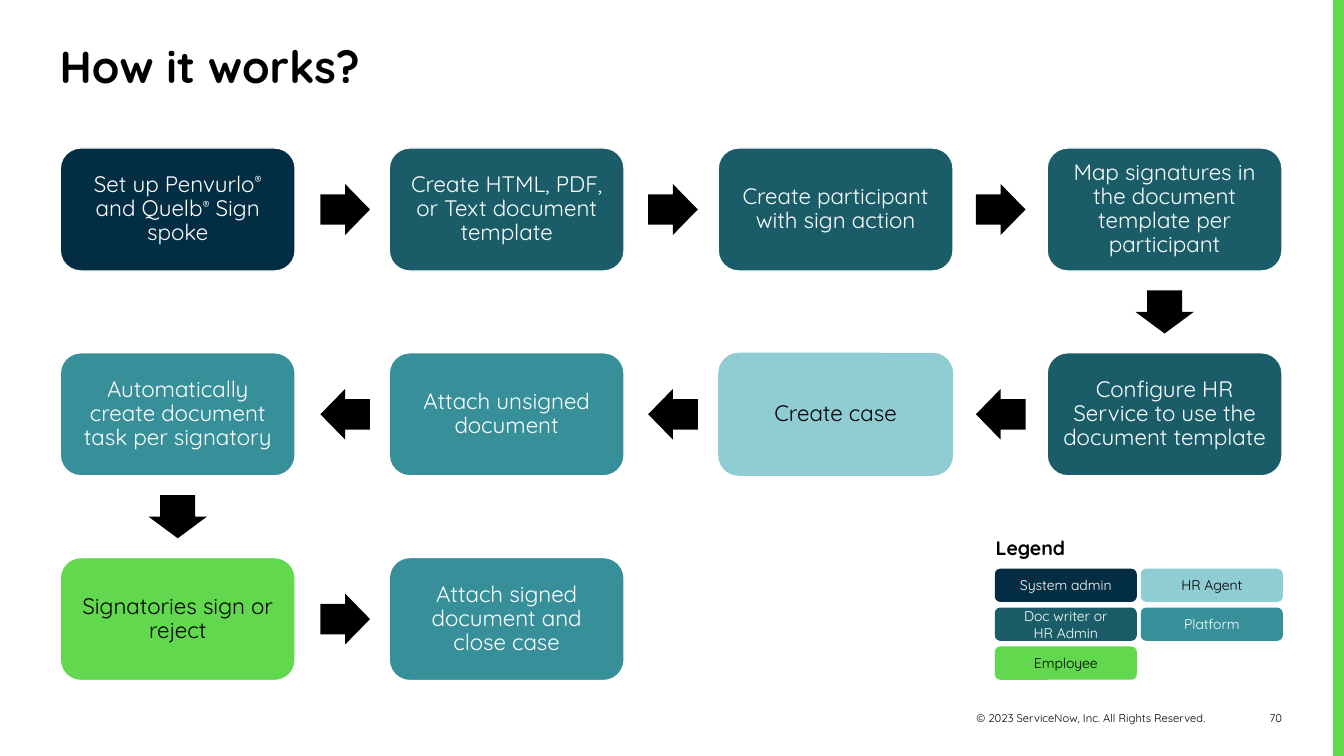
from pptx import Presentation
from pptx.dml.color import RGBColor
from pptx.enum import shapes, text
from pptx.util import Cm, Pt

BLACK = RGBColor(0x00, 0x00, 0x00)
WHITE = RGBColor(0xFF, 0xFF, 0xFF)
NAVY = RGBColor(0x03, 0x2D, 0x42)
DEEP_TEAL = RGBColor(0x1A, 0x5D, 0x68)
TEAL = RGBColor(0x37, 0x90, 0x99)
PALE_TEAL = RGBColor(0x90, 0xCC, 0xD3)
GREEN = RGBColor(0x62, 0xD8, 0x4E)
FONT = "Quicksand"

# Content: role -> (fill, font colour, outline)
ROLES = {
    "admin": (NAVY, WHITE, WHITE),
    "writer": (DEEP_TEAL, WHITE, WHITE),
    "agent": (PALE_TEAL, BLACK, None),
    "system": (TEAL, WHITE, WHITE),
    "employee": (GREEN, BLACK, WHITE),
}
TITLE = "How it works?"
# Steps in order: column, row, role, label
STEPS = [
    (0, 0, "admin", "Set up Penvurlo® and Quelb® Sign spoke"),
    (1, 0, "writer", "Create HTML, PDF, or Text document template"),
    (2, 0, "writer", "Create participant with sign action"),
    (3, 0, "writer", "Map signatures in the document template per participant"),
    (3, 1, "writer", "Configure HR Service to use the document template"),
    (2, 1, "agent", "Create case"),
    (1, 1, "system", "Attach unsigned document"),
    (0, 1, "system", "Automatically create document task per signatory"),
    (0, 2, "employee", "Signatories sign or reject"),
    (1, 2, "system", "Attach signed document and close case"),
]
LEGEND = [
    (0, 0, "admin", "System admin"),
    (0, 1, "writer", "Doc writer or\vHR Admin"),
    (1, 0, "agent", "HR Agent"),
    (1, 1, "system", "Platform"),
    (0, 2, "employee", "Employee"),
]
# Captions: left, top, width, height, size, bold, alignment, wording
CAPTIONS = [
    (24.84, 13.39, 2.34, 0.86, 14, True, text.PP_ALIGN.LEFT, "Legend"),
    (22.05, 17.81, 8.59, 0.58, 8, False, text.PP_ALIGN.RIGHT,
     "© 2023 ServiceNow, Inc. All Rights Reserved."),
    (30.71, 17.81, 1.85, 0.64, 8, False, text.PP_ALIGN.RIGHT, "70"),
]

# Layout in centimetres
STEP_LEFT, STEP_TOP, STEP_W, STEP_H = 1.52, 3.73, 5.92, 3.1
STEP_DX, STEP_DY = 8.29, 5.16
ARROW_W, ARROW_H, ARROW_X, ARROW_DX = 1.25, 1.28, 8.7, 8.26
DOWN_W, DOWN_H = 1.47, 1.09
KEY_LEFT, KEY_TOP, KEY_W, KEY_H = 25.07, 14.33, 3.58, 0.84
KEY_DX, KEY_DY = 3.68, 0.98

deck = Presentation()
deck.slide_width, deck.slide_height = Cm(33.87), Cm(19.05)
slide = deck.slides.add_slide(deck.slide_layouts[5])


def style(paragraph, size, colour, align, bold=False):
    paragraph.alignment = align
    for run in paragraph.runs:
        run.font.name = FONT
        run.font.size = Pt(size)
        run.font.bold = bold
        run.font.color.rgb = colour


def add_block(kind, left, top, width, height, fill, outline=None):
    block = slide.shapes.add_shape(kind, Cm(left), Cm(top), Cm(width), Cm(height))
    block.shadow.inherit = False
    block.fill.solid()
    block.fill.fore_color.rgb = fill
    if outline is None:
        block.line.fill.background()
    else:
        block.line.color.rgb = outline
        block.line.width = Pt(1)
    return block


def add_label(block, label, size, colour):
    frame = block.text_frame
    frame.word_wrap = True
    frame.vertical_anchor = text.MSO_ANCHOR.MIDDLE
    paragraph = frame.paragraphs[0]
    first, *others = label.split("®")
    paragraph.text = first
    for part in others:
        mark = paragraph.add_run()
        mark.text = "®"
        mark.font._element.set("baseline", "30000")
        paragraph.add_run().text = part
    style(paragraph, size, colour, text.PP_ALIGN.CENTER)
    return frame


def add_arrow(start, end):
    (col, row), (next_col, next_row) = start, end
    if row == next_row:
        kind = (shapes.MSO_SHAPE.RIGHT_ARROW if next_col > col
                else shapes.MSO_SHAPE.LEFT_ARROW)
        width, height = ARROW_W, ARROW_H
        centre_x = ARROW_X + min(col, next_col) * ARROW_DX
        centre_y = STEP_TOP + row * STEP_DY + STEP_H / 2
    else:
        kind = shapes.MSO_SHAPE.DOWN_ARROW
        width, height = DOWN_W, DOWN_H
        centre_x = STEP_LEFT + col * STEP_DX + STEP_W / 2
        centre_y = STEP_TOP + row * STEP_DY + (STEP_H + STEP_DY) / 2
    arrow = add_block(kind, centre_x - width / 2, centre_y - height / 2,
                      width, height, BLACK)
    arrow.adjustments[0] = 0.6
    arrow.adjustments[1] = 0.5


# Green edge and title
add_block(shapes.MSO_SHAPE.RECTANGLE, 33.6, 0, 0.27, 19.05, GREEN)
title = slide.shapes.title
title.left, title.top, title.width, title.height = Cm(1.25), Cm(0.86), Cm(31.1), Cm(1.78)
title.text_frame.text = TITLE
title.text_frame.vertical_anchor = text.MSO_ANCHOR.TOP
style(title.text_frame.paragraphs[0], 32, BLACK, text.PP_ALIGN.LEFT, True)

# Arrows between consecutive steps
for step, following in zip(STEPS, STEPS[1:]):
    add_arrow(step[:2], following[:2])

# Process steps
for col, row, role, label in STEPS:
    fill, colour, outline = ROLES[role]
    step_box = add_block(shapes.MSO_SHAPE.ROUNDED_RECTANGLE,
                         STEP_LEFT + col * STEP_DX, STEP_TOP + row * STEP_DY,
                         STEP_W, STEP_H, fill, outline)
    frame = add_label(step_box, label, 16, colour)
    frame.margin_top = frame.margin_bottom = Cm(0.25)
    frame.paragraphs[0].line_spacing = 0.9

# Legend keys
for col, row, role, label in LEGEND:
    fill, colour, _ = ROLES[role]
    key = add_block(shapes.MSO_SHAPE.ROUNDED_RECTANGLE,
                    KEY_LEFT + col * KEY_DX, KEY_TOP + row * KEY_DY,
                    KEY_W, KEY_H, fill)
    add_label(key, label, 10, colour)

# Legend heading, copyright line and page number
for left, top, width, height, size, bold, align, wording in CAPTIONS:
    caption = slide.shapes.add_textbox(Cm(left), Cm(top), Cm(width), Cm(height))
    caption.text_frame.word_wrap = True
    caption.text_frame.text = wording
    style(caption.text_frame.paragraphs[0], size, BLACK, align, bold)

deck.save("out.pptx")
